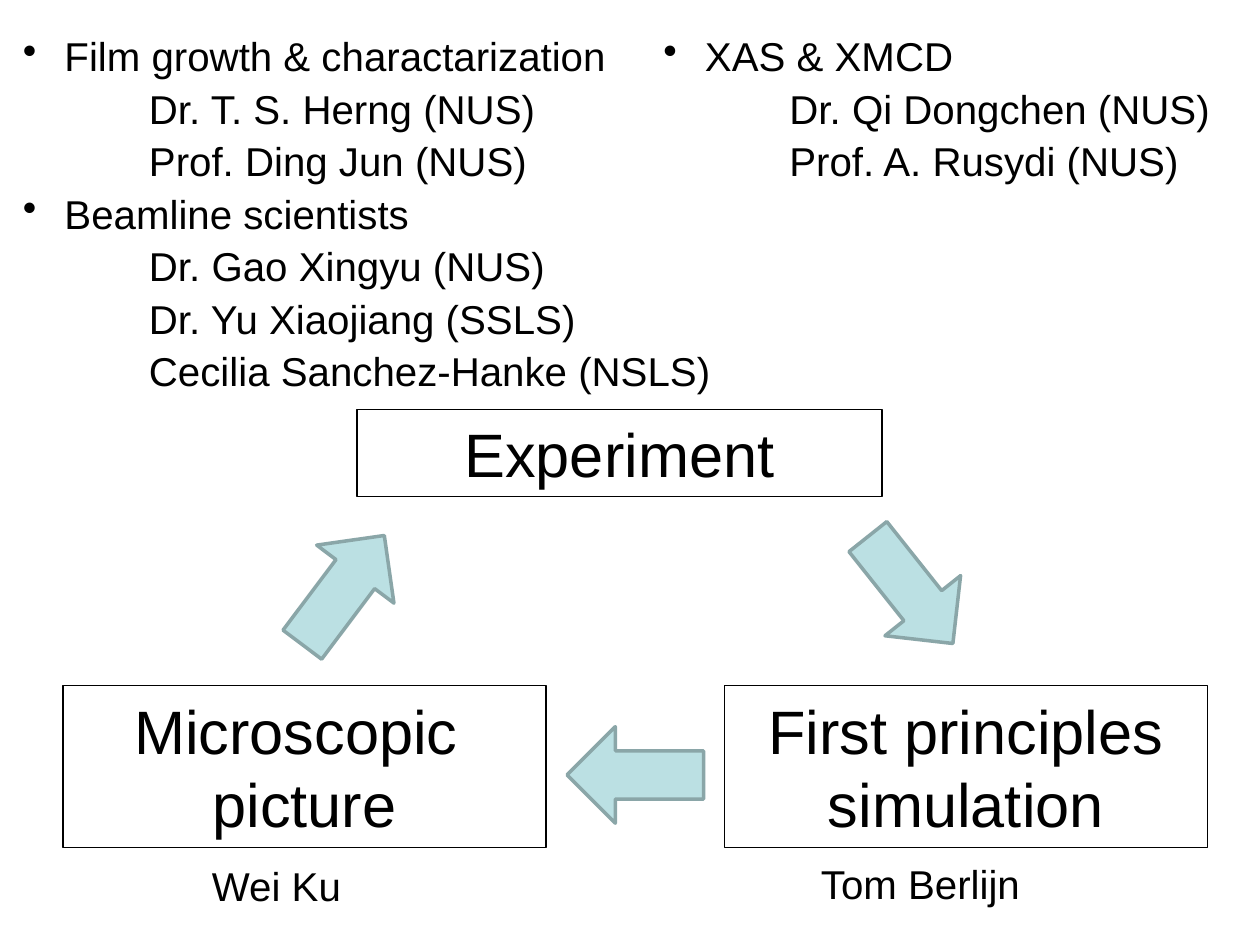
from lxml import etree
from pptx import Presentation
from pptx.dml.color import RGBColor
from pptx.enum.shapes import MSO_SHAPE
from pptx.enum.text import MSO_ANCHOR, PP_ALIGN
from pptx.oxml.ns import qn
from pptx.util import Inches, Pt

RECT, ARROW = MSO_SHAPE.RECTANGLE, MSO_SHAPE.RIGHT_ARROW
CENTER, MIDDLE = PP_ALIGN.CENTER, MSO_ANCHOR.MIDDLE
BLACK = RGBColor(0x00, 0x00, 0x00)
TEAL = RGBColor(0xBB, 0xE0, 0xE3)
TEAL_EDGE = RGBColor(0x8A, 0xA6, 0xA8)
COLS, ROWS = 120, 90


class CycleSlide:
    """Holds the style and the slide, placing elements on a 120 by 90 grid."""

    font, body_size, box_size = "Arial", Pt(23), Pt(35)
    leading, hang, name_indent = Pt(30), Inches(0.33), Inches(1)

    def __init__(self, prs):
        self.slide = prs.slides.add_slide(prs.slide_layouts[6])
        self.col, self.row = prs.slide_width / COLS, prs.slide_height / ROWS

    def place(self, x, y, w, h):
        return [int(v) for v in (x * self.col, y * self.row, w * self.col, h * self.row)]

    def style(self, p, size):
        p.font.name, p.font.size = self.font, size
        p.font.color.rgb = BLACK

    def shape(self, kind, grid, line, width):
        s = self.slide.shapes.add_shape(kind, *self.place(*grid))
        s.shadow.inherit = False
        s.line.color.rgb, s.line.width = line, Pt(width)
        return s

    def box(self, text, *grid):
        s = self.shape(RECT, grid, BLACK, 0.75)
        s.fill.background()
        tf = s.text_frame
        tf.text, tf.word_wrap, tf.vertical_anchor = text, True, MIDDLE
        for p in tf.paragraphs:
            p.alignment = CENTER
            self.style(p, self.box_size)

    def arrow(self, x, y, angle):
        s = self.shape(ARROW, (x, y, 13, 9.2), TEAL_EDGE, 2)
        s.fill.solid()
        s.fill.fore_color.rgb = TEAL
        s.rotation = angle

    def text(self, lines, *grid):
        tf = self.slide.shapes.add_textbox(*self.place(*grid)).text_frame
        tf.text, tf.word_wrap = "\n".join(lines), True
        for p in tf.paragraphs:
            p.line_spacing = self.leading
            self.style(p, self.body_size)
        return tf.paragraphs

    def people(self, groups, *grid):
        lines = [line for topic, names in groups for line in (topic, *names)]
        topics = [topic for topic, _ in groups]
        for p in self.text(lines, *grid):
            pPr = p._p.get_or_add_pPr()
            if p.text in topics:
                pPr.set("marL", str(self.hang))
                pPr.set("indent", str(-self.hang))
                bullet = etree.Element(qn("a:buChar"), char="•")
                pPr.find(qn("a:defRPr")).addprevious(bullet)
            else:
                pPr.set("marL", str(self.name_indent))


def main():
    prs = Presentation()
    prs.slide_width, prs.slide_height = Inches(10), Inches(7.5)
    s = CycleSlide(prs)

    s.box("Experiment", 34, 39, 50, 8.3)
    s.box("First principles simulation", 69, 65.3, 46, 15.4)
    s.box("Microscopic \npicture", 6, 65.3, 46, 15.4)

    s.arrow(80.2, 51.6, 51.5)
    s.arrow(54, 69.2, 180)
    s.arrow(26.2, 51.6, 306.9)

    s.people([
        ("Film growth & charactarization", ["Dr. T. S. Herng (NUS)", "Prof. Ding Jun (NUS)"]),
        ("Beamline scientists", ["Dr. Gao Xingyu (NUS)", "Dr. Yu Xiaojiang (SSLS)",
                                 "Cecilia Sanchez-Hanke (NSLS)"]),
    ], 1, 2, 68, 36.6)
    s.people([("XAS & XMCD", ["Dr. Qi Dongchen (NUS)", "Prof. A. Rusydi (NUS)"])],
             62, 2, 58, 16.3)

    s.text(["Tom Berlijn"], 77, 80.8, 26, 6.2)
    s.text(["Wei Ku"], 19, 81, 26, 5.9)
    prs.save("out.pptx")


if __name__ == "__main__":
    main()
